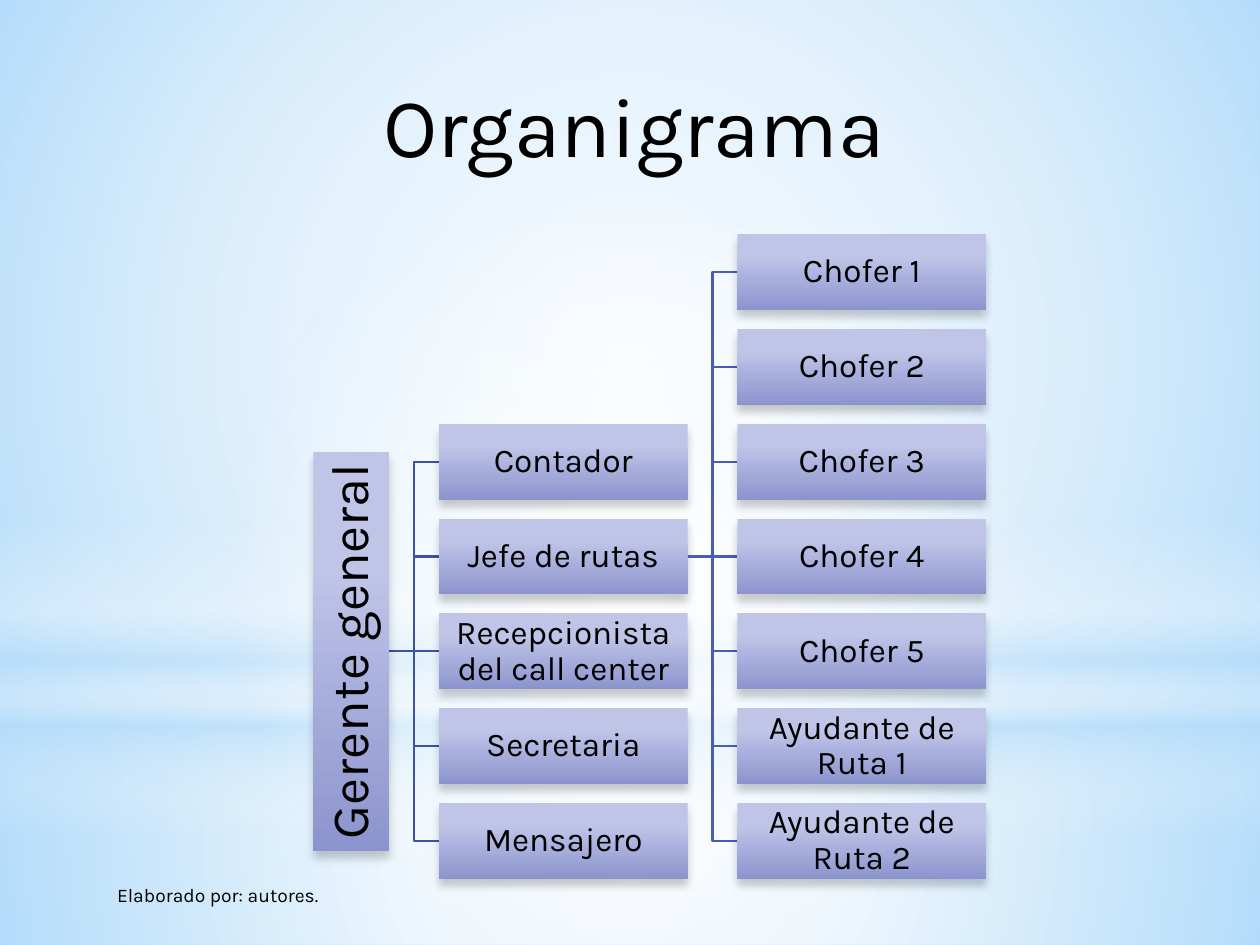
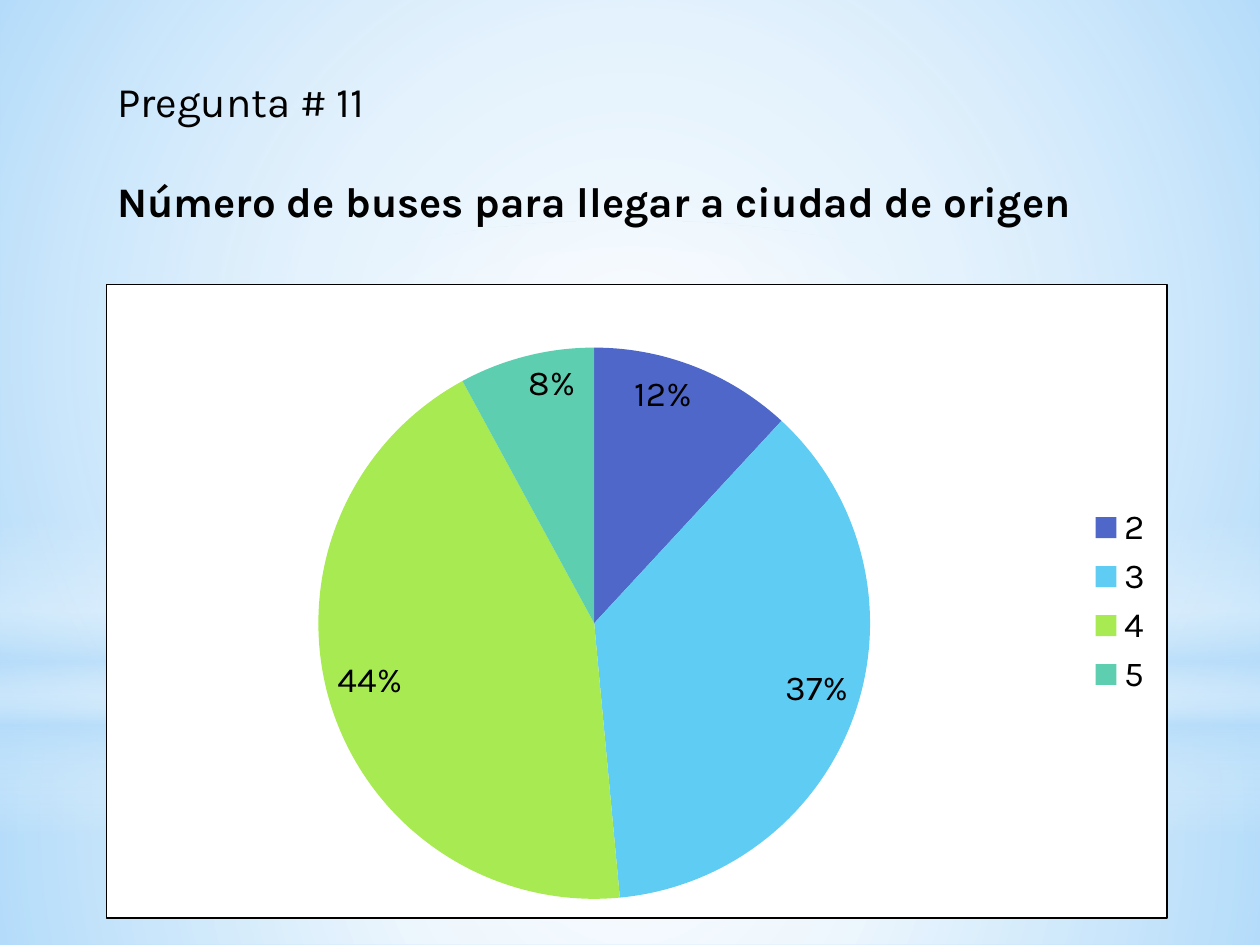
from dataclasses import dataclass

from pptx import Presentation
from pptx.chart.data import CategoryChartData
from pptx.dml.color import RGBColor
from pptx.enum.chart import XL_CHART_TYPE, XL_LABEL_POSITION as LabelPos, XL_LEGEND_POSITION as LegendPos
from pptx.enum.shapes import MSO_CONNECTOR as Conn, MSO_SHAPE as Shape
from pptx.enum.text import MSO_ANCHOR as Anchor, MSO_AUTO_SIZE as AutoSize, PP_ALIGN as Align
from pptx.oxml import parse_xml
from pptx.oxml.ns import nsdecls, qn
from pptx.util import Pt


@dataclass(frozen=True)
class Theme:
    font: str = "Karla"
    ink: str = "000000"
    white: str = "FFFFFF"
    sky: str = "B4DCFA"
    box_light: str = "C0C5E8"
    box_dark: str = "8C94CE"
    link_root: str = "3E52A0"
    link_branch: str = "475DB6"
    slices: tuple = ("4E67C8", "5ECCF3", "A7EA52", "5DCEAF")
    title: int = 48
    root: int = 30
    question: int = 24
    chart: int = 20
    box: int = 19
    note: int = 11


W, H = 720, 540
COL2, COL3, ROOT = 250.8, 421.4, 179
TOP, PITCH, BOX_W, BOX_H = 133.8, 54.18, 142.2, 43.4
ROOT_LEN = 228
STAFF = ["Contador", "Jefe de rutas", "Recepcionista del call center", "Secretaria", "Mensajero"]
CREW = [f"Chofer {n}" for n in range(1, 6)] + [f"Ayudante de Ruta {n}" for n in (1, 2)]
STAFF_ROW, BOSS_ROW, ROOT_ROW = 2, 3, 4


def apply(obj, values):
    for name, value in values.items():
        setattr(obj, name, value)


def rgb(color):
    return RGBColor.from_string(color)


class Deck:
    def __init__(self, theme):
        self.t = theme
        self.prs = Presentation()
        apply(self.prs, {"slide_width": Pt(W), "slide_height": Pt(H)})
        self.s = None

    def slide(self):
        self.s = self.prs.slides.add_slide(self.prs.slide_layouts[5])

    def gradient(self, sp, stops, radial=False):
        gs = "".join(
            f'<a:gs pos="{pos * 1000}"><a:srgbClr val="{color}">'
            f'<a:alpha val="{alpha * 1000}"/></a:srgbClr></a:gs>'
            for pos, color, alpha in stops)
        shade = ('<a:path path="circle"><a:fillToRect l="50000" t="50000" r="50000" b="50000"/></a:path>'
                 if radial else '<a:lin ang="5400000" scaled="0"/>')
        sp.fill.background()
        spPr = sp._element.spPr
        spPr.replace(spPr.find(qn("a:noFill")), parse_xml(
            f'<a:gradFill {nsdecls("a")} rotWithShape="1"><a:gsLst>{gs}</a:gsLst>{shade}</a:gradFill>'))

    def shape(self, kind, x, y, w, h, stops, radial=False):
        sp = self.s.shapes.add_shape(kind, Pt(x), Pt(y), Pt(w), Pt(h))
        sp.shadow.inherit = False
        sp.line.fill.background()
        self.gradient(sp, stops, radial)
        return sp

    def backdrop(self):
        t = self.t
        master = self.prs.slide_master
        fill = master.background.fill
        fill.solid()
        fill.fore_color.rgb = rgb(t.sky)
        horizon = 401.8
        layers = [
            (Shape.RECTANGLE, horizon, H - horizon,
             [(0, t.white, 91), (37, t.white, 76), (100, t.sky, 79)], True),
            (Shape.RECTANGLE, 0, horizon,
             [(0, t.white, 89), (48, t.white, 62), (100, t.sky, 79)], True),
            (Shape.RECTANGLE, 297, 180,
             [(0, t.white, 0), (29, t.white, 30), (45, t.sky, 40),
              (55, t.white, 26), (65, t.sky, 60), (100, t.white, 0)], False),
            (Shape.OVAL, 126, horizon, [(0, t.white, 100), (56, t.white, 0)], True),
        ]
        for i, (kind, y, h, stops, radial) in enumerate(layers):
            el = self.shape(kind, 0, y, W, h, stops, radial)._element
            el.nvSpPr.cNvPr.set("id", str(20 + i))
            master.shapes._spTree.insert(2 + i, el)

    def text(self, tf, lines, size, align, frame=None, **para):
        apply(tf, {"word_wrap": True, **(frame or {})})
        for i, (line, bold) in enumerate(lines):
            p = tf.add_paragraph() if i else tf.paragraphs[0]
            apply(p, {"alignment": align, "space_before": Pt(0), **para})
            r = p.add_run()
            r.text = line
            apply(r.font, {"name": self.t.font, "size": Pt(size), "bold": bold})
            r.font.color.rgb = rgb(self.t.ink)

    def title(self, x, y, w, h, lines, size, align, gap=0):
        sp = self.s.shapes.title
        apply(sp, {"left": Pt(x), "top": Pt(y), "width": Pt(w), "height": Pt(h)})
        self.text(sp.text_frame, lines, size, align,
                  {"vertical_anchor": Anchor.TOP, "auto_size": AutoSize.SHAPE_TO_FIT_TEXT},
                  space_after=Pt(gap))

    def note(self, x, y, w, h, line):
        sp = self.s.shapes.add_textbox(Pt(x), Pt(y), Pt(w), Pt(h))
        self.text(sp.text_frame, [(line, False)], self.t.note, Align.LEFT)

    def box(self, x, y, w, h, line, size, upright=False):
        sp = self.shape(Shape.RECTANGLE, x, y, w, h,
                        [(28, self.t.box_light, 100), (100, self.t.box_dark, 100)])
        sp._element.spPr.find(qn("a:effectLst")).append(parse_xml(
            f'<a:outerShdw {nsdecls("a")} blurRad="{Pt(5)}" dist="{Pt(4)}" dir="5400000" rotWithShape="0">'
            f'<a:srgbClr val="{self.t.ink}"><a:alpha val="20000"/></a:srgbClr></a:outerShdw>'))
        frame = {f"margin_{side}": Pt(1) for side in ("left", "right", "top", "bottom")}
        self.text(sp.text_frame, [(line, False)], size, Align.CENTER,
                  {**frame, "vertical_anchor": Anchor.MIDDLE}, line_spacing=0.9)
        if upright:
            sp.text_frame._txBody.bodyPr.set("vert", "vert270")

    def link(self, x1, y1, x2, y2, color):
        kind = Conn.STRAIGHT if y1 == y2 else Conn.ELBOW
        c = self.s.shapes.add_connector(kind, Pt(x1), Pt(y1), Pt(x2), Pt(y2))
        c.line.width = Pt(1.25)
        c.line.color.rgb = rgb(color)
        c._element.spPr.append(parse_xml(f'<a:effectLst {nsdecls("a")}/>'))

    def pie(self, x, y, w, h, cats, vals):
        t = self.t
        data = CategoryChartData()
        data.categories = cats
        data.add_series("Series 1", vals)
        chart = self.s.shapes.add_chart(XL_CHART_TYPE.PIE, Pt(x), Pt(y), Pt(w), Pt(h), data).chart
        apply(chart, {"has_title": False, "has_legend": True})
        apply(chart.legend, {"position": LegendPos.RIGHT, "include_in_layout": False})
        plot = chart.plots[0]
        apply(plot, {"vary_by_categories": True, "has_data_labels": True})
        labels = plot.data_labels
        apply(labels, {"show_percentage": True, "show_value": False, "position": LabelPos.INSIDE_END,
                       "number_format": "0%", "number_format_is_linked": False})
        for font in (chart.font, chart.legend.font, labels.font):
            apply(font, {"name": t.font, "size": Pt(t.chart)})
            font.color.rgb = rgb(t.ink)
        for i, color in enumerate(t.slices):
            fill = plot.series[0].points[i].format.fill
            fill.solid()
            fill.fore_color.rgb = rgb(color)
        area = chart._chartSpace.chart.plotArea
        for old in area.findall(qn("c:layout")):
            area.remove(old)
        place = "".join(f'<c:{k} val="{v}"/>' for k, v in
                        {"layoutTarget": "inner", "xMode": "edge", "yMode": "edge",
                         "x": 0.2, "y": 0.1, "w": 0.52, "h": 0.87}.items())
        area.insert(0, parse_xml(
            f'<c:layout {nsdecls("c")}><c:manualLayout>{place}</c:manualLayout></c:layout>'))
        chart._chartSpace.chart.addnext(parse_xml(
            f'<c:spPr {nsdecls("c", "a")}><a:solidFill><a:srgbClr val="{t.white}"/></a:solidFill>'
            f'<a:ln w="{Pt(0.75)}"><a:solidFill><a:srgbClr val="{t.ink}"/></a:solidFill></a:ln></c:spPr>'))


def row_top(row):
    return TOP + row * PITCH


def row_mid(row):
    return row_top(row) + BOX_H / 2


def organigram(d):
    t = d.t
    d.title(121.7, 38.2, 481.7, 65.5, [("Organigrama", False)], t.title, Align.CENTER)
    columns = [(ROOT + BOX_H, ROOT_ROW, COL2, STAFF_ROW, STAFF, t.link_root),
               (COL2 + BOX_W, BOSS_ROW, COL3, 0, CREW, t.link_branch)]
    for start, parent, x, first, names, color in columns:
        for row, name in enumerate(names, first):
            d.link(start, row_mid(parent), x, row_mid(row), color)
            d.box(x, row_top(row), BOX_W, BOX_H, name, t.box)
    d.box(ROOT, row_mid(ROOT_ROW) - ROOT_LEN / 2, BOX_H, ROOT_LEN, "Gerente general", t.root, upright=True)
    d.note(59.8, 501, 136, 21, "Elaborado por: autores.")


def question(d):
    d.title(59.8, 39.6, 623.5, 94.3,
            [("Pregunta # 11", False), ("Número de buses para llegar a ciudad de origen", True)],
            d.t.question, Align.JUSTIFY, gap=28.5)
    d.pie(60.3, 162, 607, 363, ["2", "3", "4", "5"], [12, 37, 44, 8])


def main():
    d = Deck(Theme())
    d.slide()
    d.backdrop()
    organigram(d)
    d.slide()
    question(d)
    d.prs.save("out.pptx")


if __name__ == "__main__":
    main()
